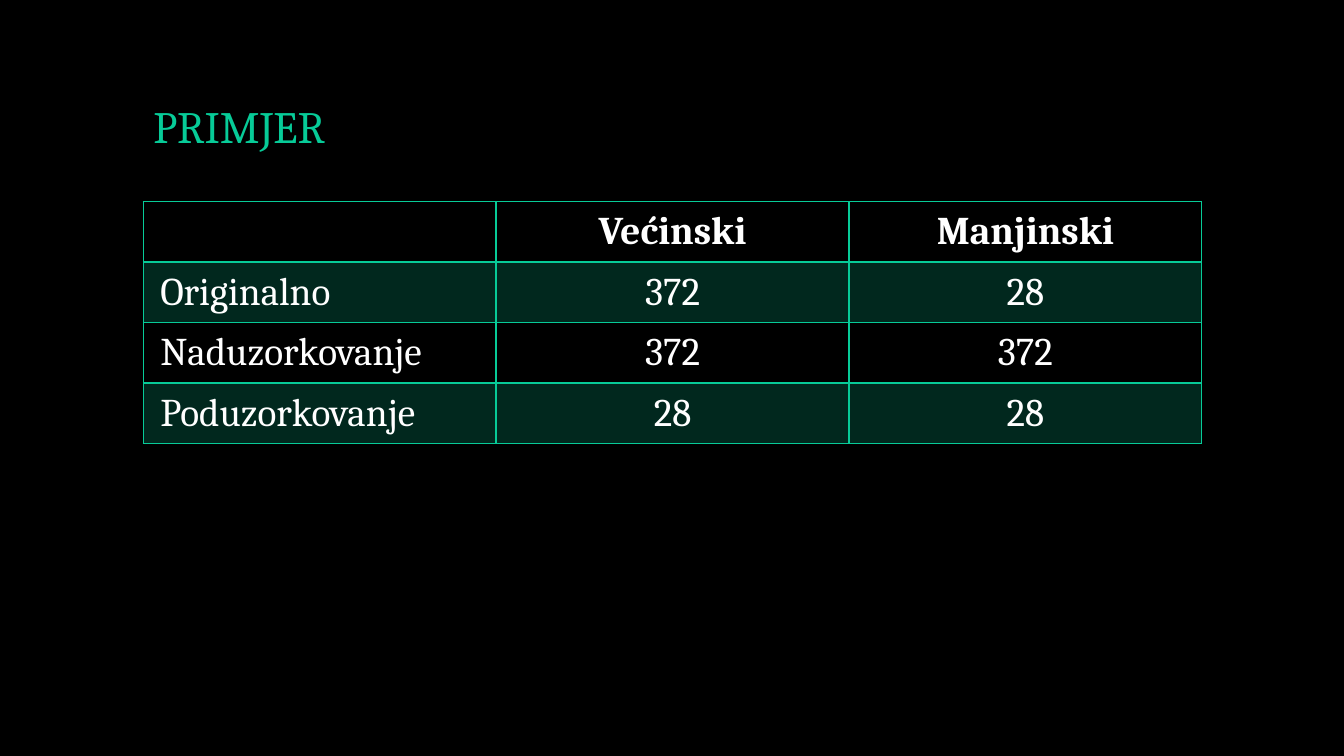
from lxml.etree import SubElement
from pptx import Presentation
from pptx.dml.color import RGBColor
from pptx.enum.text import MSO_ANCHOR, PP_ALIGN
from pptx.oxml.ns import qn
from pptx.util import Inches, Pt

COLORS = {"back": "000000", "text": "FFFFFF", "green": "07CB98"}
FONT = "Cambria"
LEFT, WIDTH = Inches(1.42), Inches(10.5)
TOP, ROW = Inches(2), Inches(0.6)
ROWS = [
    ["", "Većinski", "Manjinski"],
    ["Originalno", "372", "28"],
    ["Naduzorkovanje", "372", "372"],
    ["Poduzorkovanje", "28", "28"],
]


def style(par, size, color, bold=False):
    for run in par.runs:
        run.font.name = FONT
        run.font.size = Pt(size)
        run.font.bold = bold
        run.font.color.rgb = RGBColor.from_string(COLORS[color])


def border(cell, side, width):
    line = SubElement(cell._tc.get_or_add_tcPr(), qn(f"a:ln{side}"), w=str(Pt(width)))
    fill = SubElement(line, qn("a:solidFill"))
    SubElement(fill, qn("a:srgbClr"), val=COLORS["green"])


prs = Presentation()
prs.slide_width, prs.slide_height = Inches(13.33), Inches(7.5)
slide = prs.slides.add_slide(prs.slide_layouts[5])
slide.background.fill.solid()
slide.background.fill.fore_color.rgb = RGBColor.from_string(COLORS["back"])

title = slide.shapes.title
title.left, title.top, title.width, title.height = LEFT, Inches(0.4), WIDTH, Inches(1.17)
frame = title.text_frame
frame.text = "PRIMJER"
frame.vertical_anchor = MSO_ANCHOR.BOTTOM
head = frame.paragraphs[0]
head.alignment = PP_ALIGN.LEFT
head.line_spacing = 0.9
style(head, 32, "green")

table = slide.shapes.add_table(
    len(ROWS), len(ROWS[0]), LEFT, TOP, WIDTH, ROW * len(ROWS)
).table
table.horz_banding = False

for r, row in enumerate(ROWS):
    for c, text in enumerate(row):
        cell = table.cell(r, c)
        cell.margin_left = cell.margin_right = Inches(0.17)
        cell.margin_top = cell.margin_bottom = Inches(0.05)
        cell.vertical_anchor = MSO_ANCHOR.MIDDLE
        cell.text = text
        par = cell.text_frame.paragraphs[0]
        par.alignment = PP_ALIGN.CENTER if c or not r else PP_ALIGN.LEFT
        style(par, 28, "text", bold=r == 0)

        # Borders come before the fill in the cell's XML
        for side in "LRTB":
            thick = (r, side) in [(0, "B"), (1, "T")]
            border(cell, side, 2 if thick else 1)
        if r % 2:
            cell.fill.solid()
            cell.fill.fore_color.rgb = RGBColor.from_string(COLORS["green"])
            tint = cell._tc.tcPr.find(f"{qn('a:solidFill')}/{qn('a:srgbClr')}")
            SubElement(tint, qn("a:alpha"), val="20000")
        else:
            cell.fill.background()

prs.save("out.pptx")
